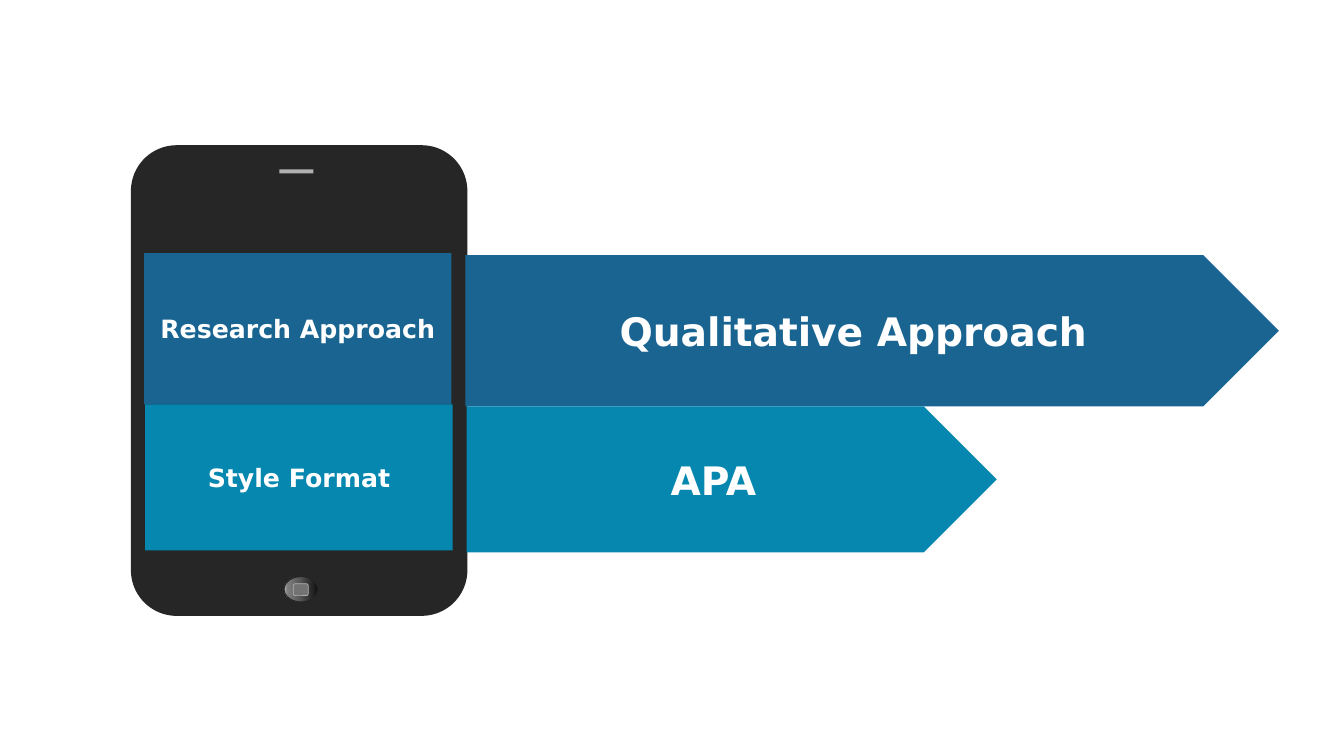
import pptx
import pptx.util
import pptx.dml.color
import pptx.enum.shapes
import pptx.enum.text
import pptx.oxml.ns
import lxml.etree

Cm = pptx.util.Cm
Pt = pptx.util.Pt
SHAPE = pptx.enum.shapes.MSO_SHAPE


class Theme:
    font = "DejaVu Sans"
    text = "FFFFFF"
    body = "262626"
    trim = "B0B0B0"
    icon = "737373"
    button = [(0, "0F0F0F"), (56, "595959"), (91, "808080"), (100, "BFBFBF")]
    research = "196491"
    style = "0587AF"
    label_size = 18
    value_size = 28


def rgb(color):
    return pptx.dml.color.RGBColor.from_string(color)


def add_box(shapes, kind, box, fill, line=None, width=0):
    """Flat preset shape; box is left, top, width, height in cm."""
    sp = shapes.add_shape(kind, *[Cm(v) for v in box])
    sp.shadow.inherit = False
    sp.fill.solid()
    sp.fill.fore_color.rgb = rgb(fill)
    if line:
        sp.line.color.rgb = rgb(line)
        sp.line.width = Pt(width)
    else:
        sp.line.fill.background()
    return sp


def set_text(sp, text, size):
    tf = sp.text_frame
    tf.word_wrap = True
    tf.vertical_anchor = pptx.enum.text.MSO_ANCHOR.MIDDLE
    p = tf.paragraphs[0]
    p.alignment = pptx.enum.text.PP_ALIGN.CENTER
    r = p.add_run()
    r.text = text
    formats = {"name": Theme.font, "size": Pt(size), "bold": True}
    for name, value in formats.items():
        setattr(r.font, name, value)
    r.font.color.rgb = rgb(Theme.text)


def set_gradient(sp, stops, angle):
    """Gradient with any number of stops, given in percent."""
    qn = pptx.oxml.ns.qn
    sp.fill.gradient()
    grad = sp._element.spPr.find(qn("a:gradFill"))
    for child in list(grad):
        grad.remove(child)
    gs_list = lxml.etree.SubElement(grad, qn("a:gsLst"))
    for pos, color in stops:
        gs = lxml.etree.SubElement(gs_list, qn("a:gs"), pos=str(pos * 1000))
        lxml.etree.SubElement(gs, qn("a:srgbClr"), val=color)
    lxml.etree.SubElement(grad, qn("a:lin"), ang=str(angle * 60000), scaled="0")


def add_phone(s, x, y, w, h):
    shapes = s.shapes.add_group_shape().shapes
    # Case and speaker
    case = add_box(shapes, SHAPE.ROUNDED_RECTANGLE, (x, y, w, h), Theme.body)
    case.adjustments[0] = 0.136
    add_box(shapes, SHAPE.RECTANGLE, (x + 3.74, y + 0.61, 0.86, 0.1), Theme.trim)
    # Home button
    button = add_box(shapes, SHAPE.OVAL, (x + 3.86, y + h - 0.99, 0.86, 0.64),
                     Theme.body, Theme.body)
    set_gradient(button, Theme.button, 180)
    add_box(shapes, SHAPE.ROUNDED_RECTANGLE, (x + 4.09, y + h - 0.81, 0.38, 0.3),
            Theme.icon, Theme.trim, 0.5)


def add_row(s, x, y, h, arrow_w, color, label, value):
    # Arrow beside the phone
    arrow = add_box(s.shapes, SHAPE.PENTAGON, (x + 8.1, y + 0.05, arrow_w, h), color)
    set_text(arrow, value, Theme.value_size)
    # Label on the screen
    screen = add_box(s.shapes, SHAPE.RECTANGLE, (x, y, 7.75, h), color)
    set_text(screen, label, Theme.label_size)


def main():
    prs = pptx.Presentation()
    prs.slide_width, prs.slide_height = Cm(33.87), Cm(19.05)
    s = prs.slides.add_slide(prs.slide_layouts[6])
    add_phone(s, 3.3, 3.66, 8.48, 11.86)
    add_row(s, 3.63, 6.38, 3.81, 20.5, Theme.research,
            "Research Approach", "Qualitative Approach")
    add_row(s, 3.66, 10.19, 3.68, 13.36, Theme.style, "Style Format", "APA")
    prs.save("out.pptx")


if __name__ == "__main__":
    main()
